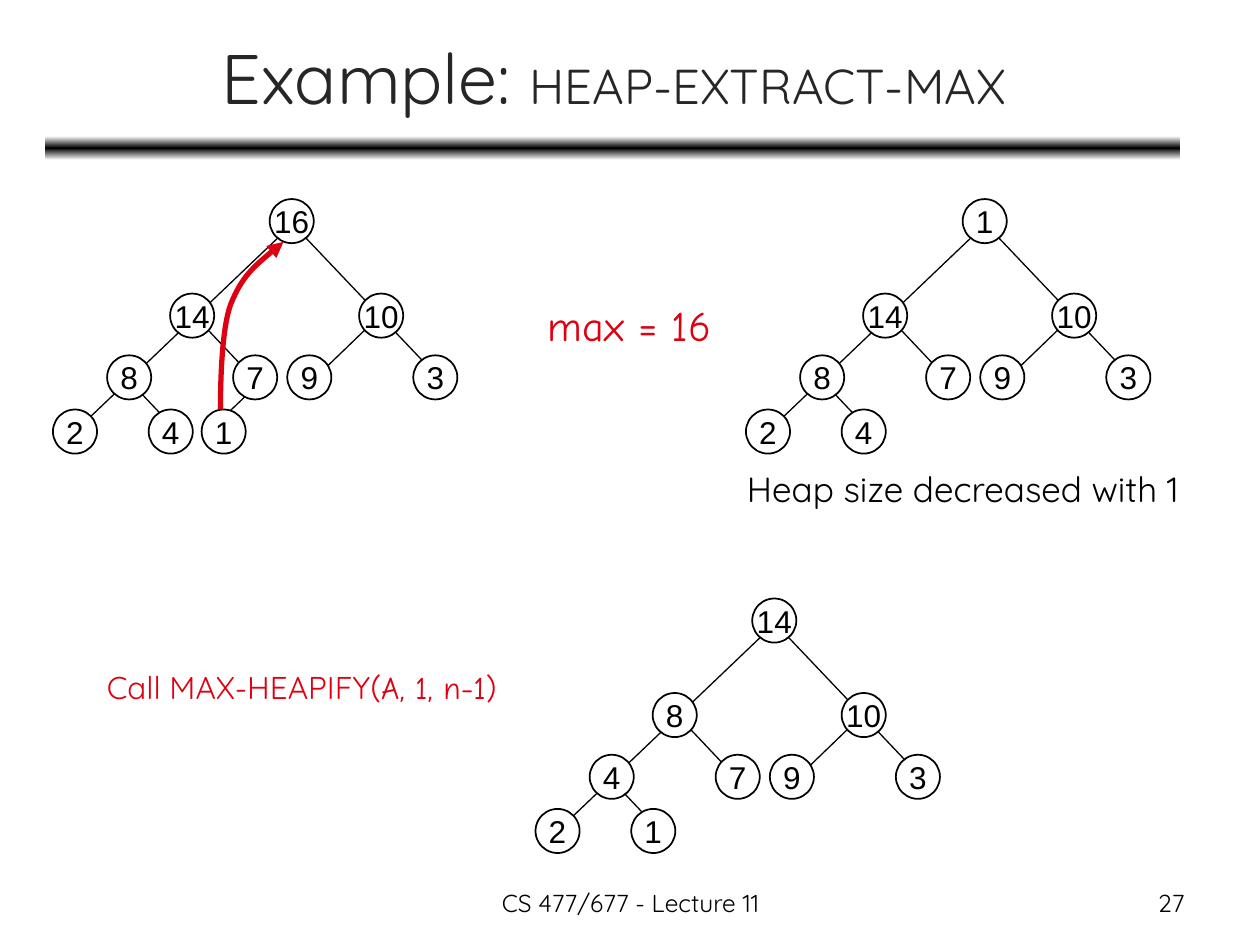
from copy import deepcopy

from lxml import etree
from pptx import Presentation
from pptx.dml.color import RGBColor
from pptx.enum.shapes import MSO_CONNECTOR, MSO_SHAPE
from pptx.enum.text import MSO_ANCHOR, PP_ALIGN
from pptx.oxml.ns import qn
from pptx.util import Pt

PX = 9144  # 100 px to the inch
LEFT, MID, RIGHT = PP_ALIGN.LEFT, PP_ALIGN.CENTER, PP_ALIGN.RIGHT
MIDDLE, TOP = MSO_ANCHOR.MIDDLE, MSO_ANCHOR.TOP
OVAL, ROUND = MSO_SHAPE.OVAL, MSO_SHAPE.ROUNDED_RECTANGLE
STRAIGHT = MSO_CONNECTOR.STRAIGHT

BLACK, WHITE, RED, GREY = "000000", "FFFFFF", "DD0111", "262626"
SANS, HAND, PLAIN = "Quicksand", "Comic Neue", "Arial"

NODE = 35
# Node places and edges, level by level, from the tree's top left corner
SPOTS = [(172, 0), (93, 75), (243, 75), (43, 124), (143, 124),
         (186, 124), (286, 124), (0, 167), (76, 167), (118, 167)]
EDGES = [(18, 184, 193, 17), (313, 149, 180, 9), (162, 145, 109, 89),
         (103, 189, 50, 133), (205, 145, 261, 91)]
LAST_EDGE = (124, 184, 169, 141)


def px(*vals):
    return [v * PX for v in vals]


def color(code):
    return RGBColor.from_string(code)


def write(shape, runs, align=LEFT, anchor=TOP, wrap=False):
    """Fill a shape with one paragraph of (text, size, font, colour) runs."""
    frame = shape.text_frame
    for key, val in {"word_wrap": wrap, "vertical_anchor": anchor}.items():
        setattr(frame, key, val)
    para = frame.paragraphs[0]
    para.alignment = align
    for text, size, face, ink in runs:
        run = para.add_run()
        run.text = text
        for key, val in {"size": Pt(size), "name": face}.items():
            setattr(run.font, key, val)
        run.font.color.rgb = color(ink)


def label(slide, box, runs, **style):
    write(slide.shapes.add_textbox(*px(*box)), runs, **style)


def stroke(line, ink, width):
    line.color.rgb = color(ink)
    line.width = Pt(width)


def bar(slide, box):
    """Rule that fades from black to white above and below."""
    shape = slide.shapes.add_shape(ROUND, *px(*box))
    shape.shadow.inherit = False
    shape.line.fill.background()
    shape.fill.gradient()
    shape.fill.gradient_angle = 90
    first = shape._element.spPr.find(".//" + qn("a:gs"))
    first.addnext(deepcopy(first))
    for stop, ink, pos in zip(shape.fill.gradient_stops,
                              (WHITE, BLACK, WHITE), (0, 0.5, 1)):
        stop.color.rgb = color(ink)
        stop.position = pos


def tree(slide, left, top, keys):
    """Draw a heap whose keys are listed level by level."""
    shapes = slide.shapes.add_group_shape().shapes
    edges = EDGES + [LAST_EDGE] * (len(keys) == len(SPOTS))
    for x1, y1, x2, y2 in edges:
        ends = px(left + x1, top + y1, left + x2, top + y2)
        edge = shapes.add_connector(STRAIGHT, *ends)
        stroke(edge.line, BLACK, 0.75)
        etree.SubElement(edge._element.spPr, qn("a:effectLst"))
    for key, (x, y) in zip(keys, SPOTS):
        node = shapes.add_shape(OVAL, *px(left + x, top + y, NODE, NODE))
        node.shadow.inherit = False
        node.fill.solid()
        node.fill.fore_color.rgb = color(WHITE)
        stroke(node.line, BLACK, 1)
        write(node, [(str(key), 18, PLAIN, BLACK)], MID, MIDDLE)


def swoop(slide, left, top, points):
    """Curved arrow with its head at the first of the Bezier points."""
    spots = [(left + x, top + y) for x, y in points]
    pen = slide.shapes.build_freeform(*spots[0], scale=PX)
    pen.add_line_segments(spots[1:], close=False)
    curve = pen.convert_to_shape()
    curve.shadow.inherit = False
    curve.fill.background()
    stroke(curve.line, RED, 3)
    legs = curve._element.findall(".//" + qn("a:lnTo"))
    for i in range(0, len(legs), 3):
        bend = etree.Element(qn("a:cubicBezTo"))
        legs[i].addprevious(bend)
        for leg in legs[i:i + 3]:
            bend.append(leg[0])
            leg.getparent().remove(leg)
    etree.SubElement(curve.line._get_or_add_ln(), qn("a:headEnd"),
                     type="triangle")


def header(slide, left, top):
    bar(slide, (left, top + 97, 901, 19))
    label(slide, (left + 1, top, 900, 99),
          [("Example: ", 40, SANS, GREY),
           ("HEAP-EXTRACT-MAX", 28, SANS, GREY)],
          align=MID, anchor=MIDDLE, wrap=True)


def footer(slide, left, top):
    label(slide, (left, top, 317, 35),
          [("CS 477/677 - Lecture 11", 14, SANS, BLACK)],
          align=MID, wrap=True)
    label(slide, (left + 375, top, 233, 35), [("27", 14, SANS, BLACK)],
          align=RIGHT, wrap=True)


def main():
    deck = Presentation()
    deck.slide_width, deck.slide_height = px(1000, 750)
    slide = deck.slides.add_slide(deck.slide_layouts[6])

    header(slide, 36, 11)
    tree(slide, 42, 158, [16, 14, 10, 8, 7, 9, 3, 2, 4, 1])
    label(slide, (425, 233, 155, 50), [("max = 16", 24, HAND, RED)])
    tree(slide, 592, 158, [1, 14, 10, 8, 7, 9, 3, 2, 4])
    swoop(slide, 175, 192, [(50, 0), (33, 14), (17, 27), (8, 50),
                            (0, 72), (0, 123), (0, 133)])
    label(slide, (583, 366, 394, 44),
          [("Heap size decreased with 1", 20, SANS, BLACK)])
    tree(slide, 425, 475, [14, 8, 10, 4, 7, 9, 3, 2, 1])
    label(slide, (75, 525, 351, 40),
          [("Call MAX-HEAPIFY", 18, SANS, RED),
           ("(A, 1, n-1)", 18, HAND, RED)])
    footer(slide, 342, 700)
    deck.save("out.pptx")


if __name__ == "__main__":
    main()
